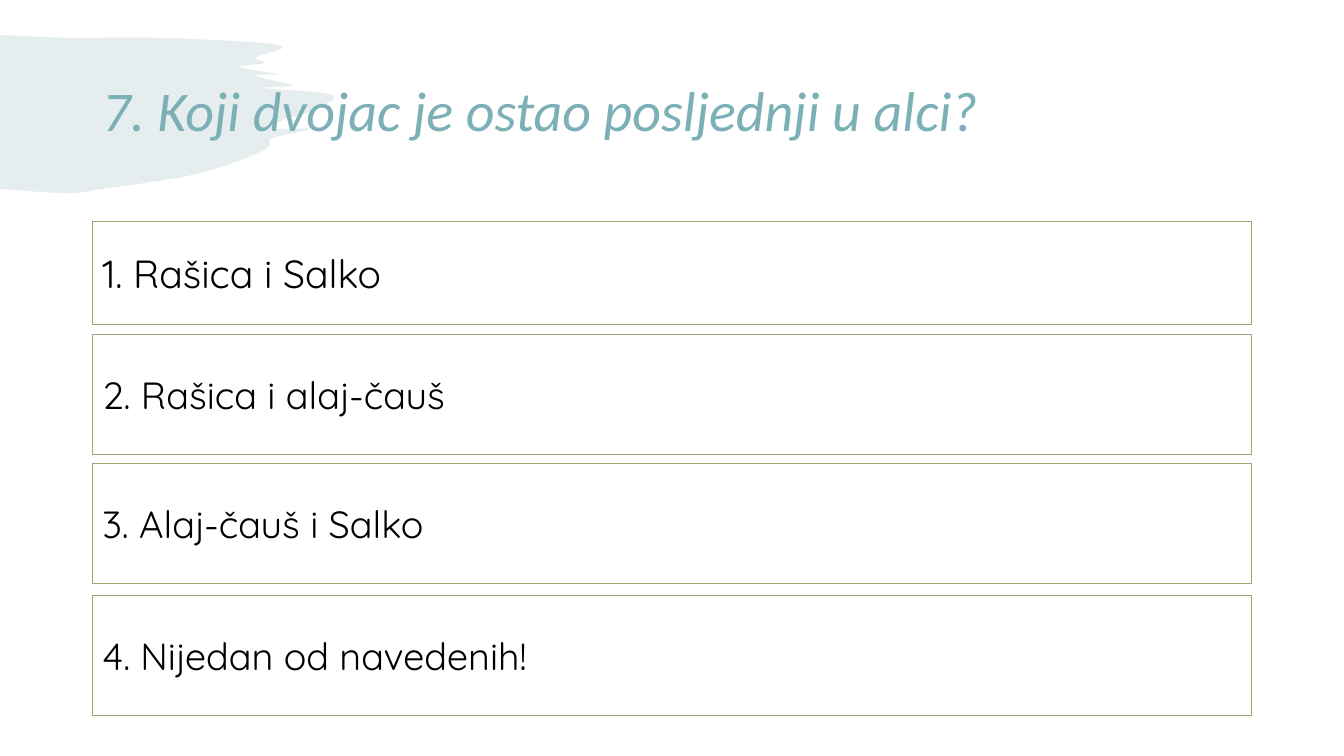
from dataclasses import dataclass

from lxml.etree import SubElement
from pptx import Presentation
from pptx.dml.color import RGBColor
from pptx.enum.shapes import MSO_SHAPE
from pptx.enum.text import MSO_ANCHOR, PP_ALIGN
from pptx.oxml.ns import qn
from pptx.slide import Slide
from pptx.text.text import TextFrame
from pptx.util import Pt

LEFT, WIDTH = 66, 828
CURVE_STEPS = 5

# Points along the brush stroke, clockwise from the slide edge
BRUSH_POINTS = [
    (0, 25), (48, 27), (109, 27), (179, 30), (202, 34), (182, 41), (189, 45),
    (171, 48), (198, 53), (181, 54), (209, 61), (189, 63), (238, 68),
    (221, 80), (201, 86), (197, 92), (222, 92), (194, 99), (189, 107),
    (142, 124), (73, 135), (47, 138), (0, 135),
]


@dataclass
class Answer:
    text: str
    top: float
    height: float = 85.7
    size: float = 27
    space_before: float = 0


ANSWERS = [
    Answer("1. Rašica i Salko", 158.4, 73.4, 28, 10),
    Answer("2. Rašica i alaj-čauš", 239),
    Answer("3. Alaj-čauš i Salko", 331.2),
    Answer("4. Nijedan od navedenih!", 425.5),
]


def color(value: str) -> RGBColor:
    return RGBColor.from_string(value)


def spline(a: float, b: float, c: float, d: float, t: float) -> float:
    """Catmull-Rom value between b and c."""
    return b + t / 2 * (c - a + t * (2 * a - 5 * b + 4 * c - d
                                     + t * (3 * (b - c) + d - a)))


def brush_outline() -> list[tuple[int, int]]:
    padded = [BRUSH_POINTS[0], *BRUSH_POINTS, BRUSH_POINTS[-1]]
    outline = [BRUSH_POINTS[0]]
    for around in zip(padded, padded[1:], padded[2:], padded[3:]):
        xs, ys = zip(*around)
        for step in range(1, CURVE_STEPS + 1):
            t = step / CURVE_STEPS
            outline.append((spline(*xs, t), spline(*ys, t)))
    return [(Pt(x), Pt(y)) for x, y in outline]


def draw_brush(slide: Slide) -> None:
    start, *rest = brush_outline()
    builder = slide.shapes.build_freeform(*start)
    builder.add_line_segments(rest, close=True)
    brush = builder.convert_to_shape()
    brush.shadow.inherit = False
    brush.fill.solid()
    brush.fill.fore_color.rgb = color("82A8AB")
    brush.line.fill.background()
    # 20 % opacity
    fill_color = brush.element.spPr.find(qn("a:solidFill"))[0]
    SubElement(fill_color, qn("a:alpha"), val="20000")


def write_line(frame: TextFrame, text: str, size: float, font_name: str,
               font_color: str, italic: bool = False, space_before: float = 0) -> None:
    frame.word_wrap = True
    frame.vertical_anchor = MSO_ANCHOR.MIDDLE
    paragraph = frame.paragraphs[0]
    paragraph.alignment = PP_ALIGN.LEFT
    paragraph.space_before = Pt(space_before)
    run = paragraph.add_run()
    run.text = text
    run.font.size = Pt(size)
    run.font.name = font_name
    run.font.italic = italic
    run.font.color.rgb = color(font_color)


def draw_question(slide: Slide) -> None:
    question = slide.shapes.add_textbox(Pt(LEFT), Pt(28.8), Pt(WIDTH), Pt(104.4))
    write_line(question.text_frame, "7. Koji dvojac je ostao posljednji u alci?",
               40, "Calibri", "7BB0B6", italic=True)
    question.text_frame.paragraphs[0].line_spacing = 0.9


def draw_answer(slide: Slide, answer: Answer) -> None:
    button = slide.shapes.add_shape(MSO_SHAPE.ACTION_BUTTON_CUSTOM, Pt(LEFT),
                                    Pt(answer.top), Pt(WIDTH), Pt(answer.height))
    button.shadow.inherit = False
    button.fill.solid()
    button.fill.fore_color.rgb = color("FFFFFF")
    button.line.color.rgb = color("A4A470")
    button.line.width = Pt(1)
    write_line(button.text_frame, answer.text, answer.size, "Quicksand", "000000",
               space_before=answer.space_before)


def main() -> None:
    presentation = Presentation()
    presentation.slide_width = Pt(960)
    presentation.slide_height = Pt(540)
    slide = presentation.slides.add_slide(presentation.slide_layouts[6])
    draw_brush(slide)
    draw_question(slide)
    for answer in ANSWERS:
        draw_answer(slide, answer)
    presentation.save("out.pptx")


if __name__ == "__main__":
    main()
